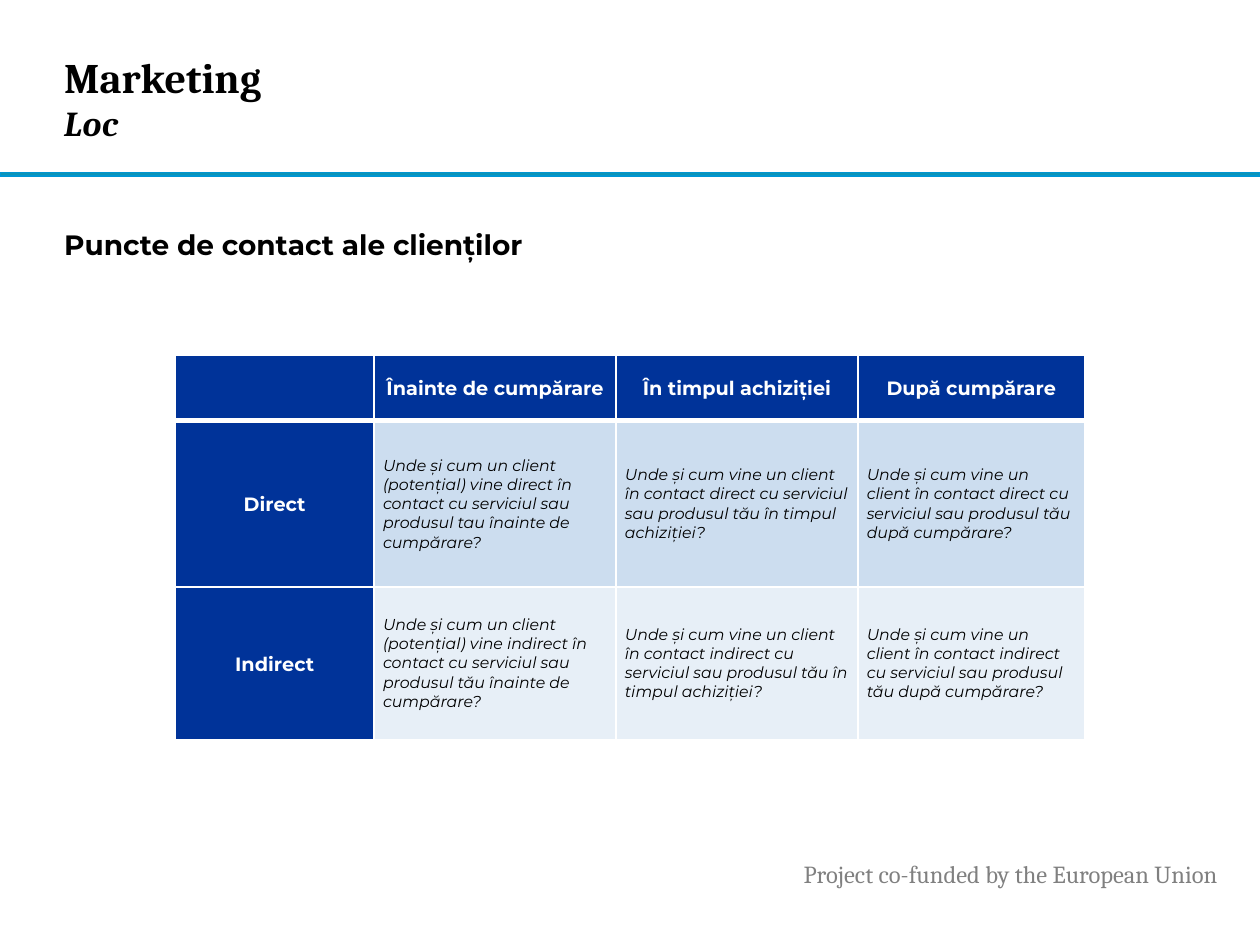
from dataclasses import dataclass

import pptx
import pptx.dml.color
import pptx.enum.shapes
import pptx.enum.text
import pptx.oxml
import pptx.oxml.ns
import pptx.util

Inches = pptx.util.Inches
Pt = pptx.util.Pt
Align = pptx.enum.text.PP_ALIGN
Anchor = pptx.enum.text.MSO_ANCHOR

SERIF, SANS = "Cambria", "Montserrat"
BLACK, WHITE, GREY, NAVY = "000000", "FFFFFF", "808080", "003399"


@dataclass(frozen=True)
class Style:
    face: str
    size: int
    color: str = BLACK
    bold: bool = False
    italic: bool = False


@dataclass(frozen=True)
class Row:
    label: str
    fill: str
    cells: tuple[str, ...]


HEAD = Style(SANS, 11, WHITE, bold=True)
NOTE = Style(SANS, 9, italic=True)

COLS = (1.58, 1.92, 1.92, 1.8)
HEIGHTS = (0.52, 1.32, 1.21)
STAGES = ("Înainte de cumpărare", "În timpul achiziției", "După cumpărare")
ROWS = (
    Row("Direct", "CCDDEF", (
        "Unde și cum un client (potențial) vine direct în contact cu "
        "serviciul sau produsul tau înainte de cumpărare?",
        "Unde și cum vine un client în contact direct cu serviciul sau "
        "produsul tău în timpul achiziției?",
        "Unde și cum vine un client în contact direct cu serviciul sau "
        "produsul tău după cumpărare?",
    )),
    Row("Indirect", "E7EFF7", (
        "Unde și cum un client (potențial) vine indirect în contact cu "
        "serviciul sau produsul tău înainte de cumpărare?",
        "Unde și cum vine un client în contact indirect cu serviciul sau "
        "produsul tău în timpul achiziției?",
        "Unde și cum vine un client în contact indirect cu serviciul sau "
        "produsul tău după cumpărare?",
    )),
)


def paint(color_format, color: str) -> None:
    color_format.rgb = pptx.dml.color.RGBColor.from_string(color)


def fill_solid(fill, color: str) -> None:
    fill.solid()
    paint(fill.fore_color, color)


def add_run(para, text: str, style: Style) -> None:
    run = para.add_run()
    run.text = text
    font = run.font
    font.name, font.size = style.face, Pt(style.size)
    font.bold, font.italic = style.bold, style.italic
    paint(font.color, style.color)


def set_insets(frame, side: float, edge: float) -> None:
    frame.margin_left = frame.margin_right = Inches(side)
    frame.margin_top = frame.margin_bottom = Inches(edge)


def place(shape, left: float, top: float, width: float, height: float) -> None:
    shape.left, shape.top = Inches(left), Inches(top)
    shape.width, shape.height = Inches(width), Inches(height)


def add_text(slide, box: tuple[float, ...], text: str, style: Style):
    frame = slide.shapes.add_textbox(*map(Inches, box)).text_frame
    frame.word_wrap = True
    add_run(frame.paragraphs[0], text, style)
    return frame


def add_borders(cell, widths: dict[str, int]) -> None:
    props = cell._tc.get_or_add_tcPr()
    for side, width in widths.items():
        props.append(pptx.oxml.parse_xml(
            f'<a:ln{side} {pptx.oxml.ns.nsdecls("a")} w="{Pt(width)}">'
            f'<a:solidFill><a:srgbClr val="{WHITE}"/></a:solidFill>'
            f'</a:ln{side}>'))


def fill_cell(cell, text: str, fill: str, style: Style, top: int, base: int) -> None:
    add_borders(cell, {"L": 1, "R": 1, "T": top, "B": base})
    fill_solid(cell.fill, fill)
    cell.vertical_anchor = Anchor.MIDDLE
    set_insets(cell, 0.07, 0)
    if not text:
        return
    para = cell.text_frame.paragraphs[0]
    if style is HEAD:
        para.alignment = Align.CENTER
        para.line_spacing = 1.07
    add_run(para, text, style)


def add_grid(slide) -> None:
    table = slide.shapes.add_table(
        len(HEIGHTS), len(COLS), Inches(1.39), Inches(2.82),
        Inches(sum(COLS)), Inches(sum(HEIGHTS))).table
    for col, width in zip(table.columns, COLS):
        col.width = Inches(width)
    for row, height in zip(table.rows, HEIGHTS):
        row.height = Inches(height)

    for c, text in enumerate(("",) + STAGES):
        fill_cell(table.cell(0, c), text, NAVY, HEAD, 1, 3)
    for r, row in enumerate(ROWS, 1):
        top = 3 if r == 1 else 1
        fill_cell(table.cell(r, 0), row.label, NAVY, HEAD, top, 1)
        for c, text in enumerate(row.cells, 1):
            fill_cell(table.cell(r, c), text, row.fill, NOTE, top, 1)


def add_title(slide) -> None:
    title = slide.shapes.title
    place(title, 0.51, 0.18, 7.27, 1.19)
    frame = title.text_frame
    frame.word_wrap = True
    frame.auto_size = pptx.enum.text.MSO_AUTO_SIZE.NONE
    frame.vertical_anchor = Anchor.MIDDLE
    set_insets(frame, 0, 0)
    lines = (
        ("Marketing", Style(SERIF, 24, bold=True)),
        ("Loc", Style(SERIF, 20, bold=True, italic=True)),
    )
    for i, (text, style) in enumerate(lines):
        para = frame.add_paragraph() if i else frame.paragraphs[0]
        para.alignment = Align.LEFT
        add_run(para, text, style)


def add_rule(slide) -> None:
    rule = slide.shapes.add_shape(
        pptx.enum.shapes.MSO_SHAPE.RECTANGLE,
        *map(Inches, (0, 1.37, 10, 0.03)))
    rule.shadow.inherit = False
    fill_solid(rule.fill, "0C94B7")
    paint(rule.line.color, "0096D3")
    rule.line.width = Pt(1)


def main() -> None:
    deck = pptx.Presentation()
    deck.slide_width, deck.slide_height = Inches(10), Inches(7.5)
    slide = deck.slides.add_slide(deck.slide_layouts[5])
    add_rule(slide)
    add_text(slide, (6.28, 6.77, 3.66, 0.34),
             "Project co-funded by the European Union",
             Style(SERIF, 14, GREY))
    add_title(slide)
    body = add_text(slide, (0.51, 1.76, 8.49, 0.5),
                    "Puncte de contact ale clienților",
                    Style(SANS, 16, bold=True))
    set_insets(body, 0, 0.05)
    add_grid(slide)
    deck.save("out.pptx")


if __name__ == "__main__":
    main()
